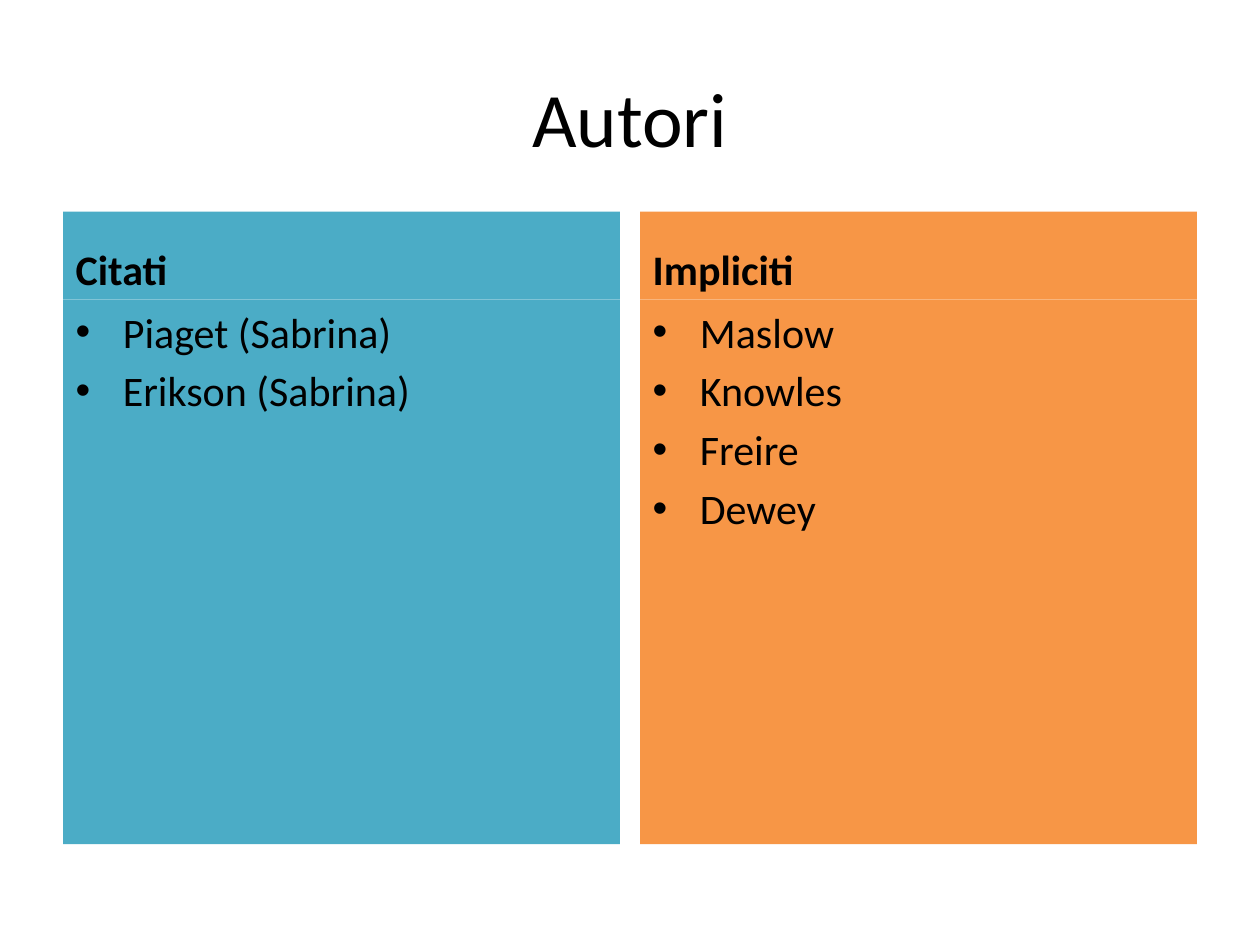
import pptx
import pptx.dml.color
import pptx.enum.text
import pptx.util

Pt = pptx.util.Pt
RGB = pptx.dml.color.RGBColor.from_string
ANCHOR = pptx.enum.text.MSO_ANCHOR
ALIGN = pptx.enum.text.PP_ALIGN

TITLE = "Autori"
COLUMNS = [
    {"heading": "Citati", "authors": ["Piaget (Sabrina)", "Erikson (Sabrina)"], "fill": "citati"},
    {"heading": "Impliciti", "authors": ["Maslow", "Knowles", "Freire", "Dewey"], "fill": "impliciti"},
]

THEME = {
    "font": "Calibri",
    "title_size": 44,
    "text_size": 24,
    "text": "000000",
    "citati": "4BACC6",
    "impliciti": "F79646",
}

SLIDE_WIDTH, SLIDE_HEIGHT = 720, 540
MARGIN, GAP = 36, 11.5
TITLE_TOP, TITLE_HEIGHT = 21.6, 90
HEADING_TOP, HEADING_HEIGHT = 120.9, 50.4
LIST_HEIGHT = 311.1


def fill_placeholder(placeholder, box, lines, size, anchor, align, bold=False, fill=None):
    """Place a placeholder and give it one formatted paragraph per line."""
    for side, length in zip(("left", "top", "width", "height"), box):
        setattr(placeholder, side, Pt(length))
    if fill:
        placeholder.fill.solid()
        placeholder.fill.fore_color.rgb = RGB(THEME[fill])
    frame = placeholder.text_frame
    frame.text = "\n".join(lines)
    frame.vertical_anchor = anchor
    font_format = {"name": THEME["font"], "size": Pt(size), "bold": bold}
    for paragraph in frame.paragraphs:
        paragraph.alignment = align
        for run in paragraph.runs:
            for attribute, value in font_format.items():
                setattr(run.font, attribute, value)
            run.font.color.rgb = RGB(THEME["text"])


def main():
    presentation = pptx.Presentation()
    presentation.slide_width = Pt(SLIDE_WIDTH)
    presentation.slide_height = Pt(SLIDE_HEIGHT)
    comparison = presentation.slide_layouts.get_by_name("Comparison")
    slide = presentation.slides.add_slide(comparison)
    title, *bodies = slide.placeholders

    content_width = SLIDE_WIDTH - 2 * MARGIN
    fill_placeholder(title, (MARGIN, TITLE_TOP, content_width, TITLE_HEIGHT), [TITLE],
                     THEME["title_size"], ANCHOR.MIDDLE, ALIGN.CENTER)

    column_width = (content_width - GAP * (len(COLUMNS) - 1)) / len(COLUMNS)
    list_top = HEADING_TOP + HEADING_HEIGHT
    for index, (column, heading, authors) in enumerate(zip(COLUMNS, bodies[::2], bodies[1::2])):
        left = MARGIN + index * (column_width + GAP)
        fill_placeholder(heading, (left, HEADING_TOP, column_width, HEADING_HEIGHT),
                         [column["heading"]], THEME["text_size"], ANCHOR.BOTTOM, ALIGN.LEFT,
                         bold=True, fill=column["fill"])
        fill_placeholder(authors, (left, list_top, column_width, LIST_HEIGHT),
                         column["authors"], THEME["text_size"], ANCHOR.TOP, ALIGN.LEFT,
                         fill=column["fill"])

    presentation.save("out.pptx")


if __name__ == "__main__":
    main()
